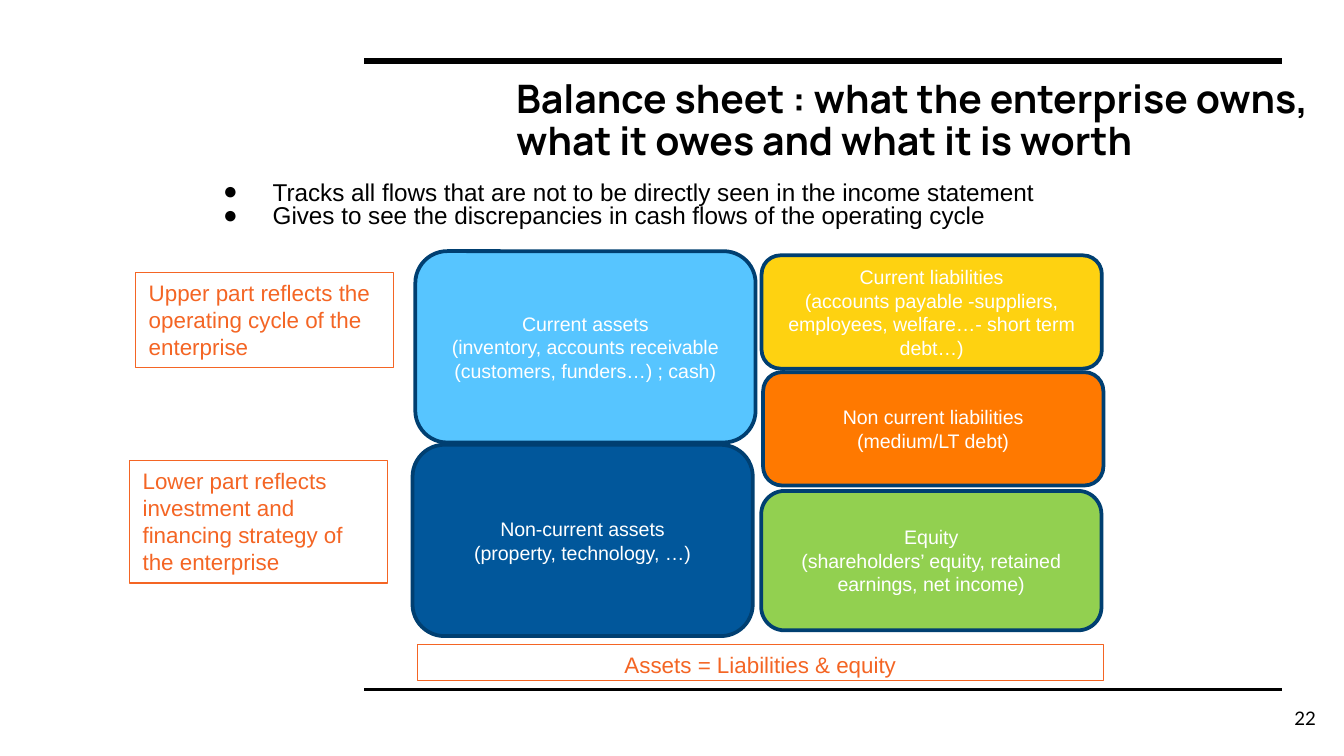
from lxml.etree import SubElement
from pptx import Presentation
from pptx.dml.color import RGBColor as Rgb
from pptx.enum.shapes import MSO_CONNECTOR as Link, MSO_SHAPE as Kind
from pptx.enum.text import MSO_ANCHOR as Anchor, PP_ALIGN as Align
from pptx.oxml.ns import qn
from pptx.util import Pt

TITLE = "Balance sheet : what the enterprise owns, what it owes and what it is worth"
POINTS = [
    "Tracks all flows that are not to be directly seen in the income statement",
    "Gives to see the discrepancies in cash flows of the operating cycle",
]
PAGE = "22"

# Boxes: left, top, width, height, then text
WIDE = 182.3
BLOCKS = [
    ("sky", (222.5, 134.6, WIDE, 102.5),
     ["Current assets", "(inventory, accounts receivable (customers, funders…) ; cash)"]),
    ("navy", (221, 238.3, WIDE, 102.5),
     ["Non-current assets", "(property, technology, …)"]),
    ("gold", (408, 136.8, WIDE, 60.7),
     ["Current liabilities",
      "(accounts payable -suppliers, employees, welfare…- short term debt…)"]),
    ("orange", (408.8, 199.4, WIDE, 60.7),
     ["Non current liabilities", "(medium/LT debt)"]),
    ("green", (407.8, 263, WIDE, 74.7),
     ["Equity", "(shareholders’ equity, retained earnings, net income)"]),
]
NOTES = [
    ((223.7, 345.4, 367.4, 19.3), Align.CENTER, "Assets = Liabilities & equity"),
    ((69.3, 246.8, 138.3, 65.5), Align.LEFT,
     "Lower part reflects investment and financing strategy of the enterprise"),
    ((72.6, 146, 138.3, 50.8), Align.LEFT,
     "Upper part reflects the operating cycle of the enterprise"),
]
RULES = [(32.6, 3), (369.3, 1.5)]  # height on the slide, weight
RULE_ENDS = 195.2, 686.8

THEME = {
    "color": {
        "ink": "000000", "white": "FFFFFF", "rust": "F46524", "edge": "003F71",
        "sky": "57C5FF", "navy": "01579B", "gold": "FED211",
        "orange": "FF7900", "green": "92D050",
    },
    "type": {  # font, size, bold, color
        "title": ("Manrope", 21, True, "ink"),
        "point": ("Arial", 13, False, "ink"),
        "block": ("Arial", 10.5, False, "white"),
        "note": ("Arial", 12, False, "rust"),
        "page": ("Lato", 10, False, "ink"),
    },
}


def color(name):
    return Rgb.from_string(THEME["color"][name])


def place(shape, box):
    for key, val in zip(("left", "top", "width", "height"), box):
        setattr(shape, key, Pt(val))


def write(shape, lines, style, align=Align.LEFT, anchor=Anchor.TOP, pad=7.2, space=1):
    """Fill a shape with one paragraph per line, in a theme type style."""
    frame = shape.text_frame
    form = {
        "word_wrap": True, "vertical_anchor": anchor,
        "margin_left": Pt(7.2), "margin_right": Pt(7.2),
        "margin_top": Pt(pad), "margin_bottom": Pt(pad),
    }
    for key, val in form.items():
        setattr(frame, key, val)
    face, size, bold, tint = THEME["type"][style]
    for i, line in enumerate(lines):
        para = frame.add_paragraph() if i else frame.paragraphs[0]
        para.alignment, para.line_spacing = align, space
        run = para.add_run()
        run.text = line
        for key, val in {"name": face, "size": Pt(size), "bold": bold}.items():
            setattr(run.font, key, val)
        run.font.color.rgb = color(tint)


def bullet(para):
    props = para._p.get_or_add_pPr()
    props.set("marL", str(Pt(36)))
    props.set("indent", str(Pt(-26.6)))
    tint = SubElement(props, qn("a:buClr"))
    SubElement(tint, qn("a:srgbClr")).set("val", THEME["color"]["ink"])
    SubElement(props, qn("a:buFont")).set("typeface", "Arial")
    SubElement(props, qn("a:buChar")).set("char", "●")


def panel(slide, kind, box, fill, edge, weight):
    shape = slide.shapes.add_shape(kind, *map(Pt, box))
    shape.shadow.inherit = False
    if fill:
        shape.fill.solid()
        shape.fill.fore_color.rgb = color(fill)
    else:
        shape.fill.background()
    shape.line.color.rgb = color(edge)
    shape.line.width = Pt(weight)
    return shape


def rule(slide, y, weight):
    x1, x2 = RULE_ENDS
    line = slide.shapes.add_connector(Link.STRAIGHT, Pt(x1), Pt(y), Pt(x2), Pt(y))
    line.line.color.rgb = color("ink")
    line.line.width = Pt(weight)
    SubElement(line._element.spPr, qn("a:effectLst"))


def main():
    deck = Presentation()
    deck.slide_width, deck.slide_height = Pt(720), Pt(405)
    slide = deck.slides.add_slide(deck.slide_layouts[5])

    title = slide.shapes.title
    place(title, (269.3, 35.3, 442.8, 50.4))
    write(title, [TITLE], "title", space=0.9)

    body = slide.shapes.add_textbox(Pt(103), Pt(90.7), Pt(553.7), Pt(40))
    write(body, POINTS, "point", space=0.8)
    for para in body.text_frame.paragraphs:
        bullet(para)

    for box, align, text in NOTES:
        note = panel(slide, Kind.RECTANGLE, box, None, "rust", 0.75)
        write(note, [text], "note", align, pad=3.6)

    for fill, box, lines in BLOCKS:
        block = panel(slide, Kind.ROUNDED_RECTANGLE, box, fill, "edge", 2)
        write(block, lines, "block", Align.CENTER, Anchor.MIDDLE, pad=3.6)

    for y, weight in RULES:
        rule(slide, y, weight)

    page = slide.shapes.add_textbox(Pt(668.9), Pt(369.4), Pt(43.2), Pt(31))
    write(page, [PAGE], "page", Align.RIGHT, Anchor.MIDDLE)

    deck.save("out.pptx")


if __name__ == "__main__":
    main()
